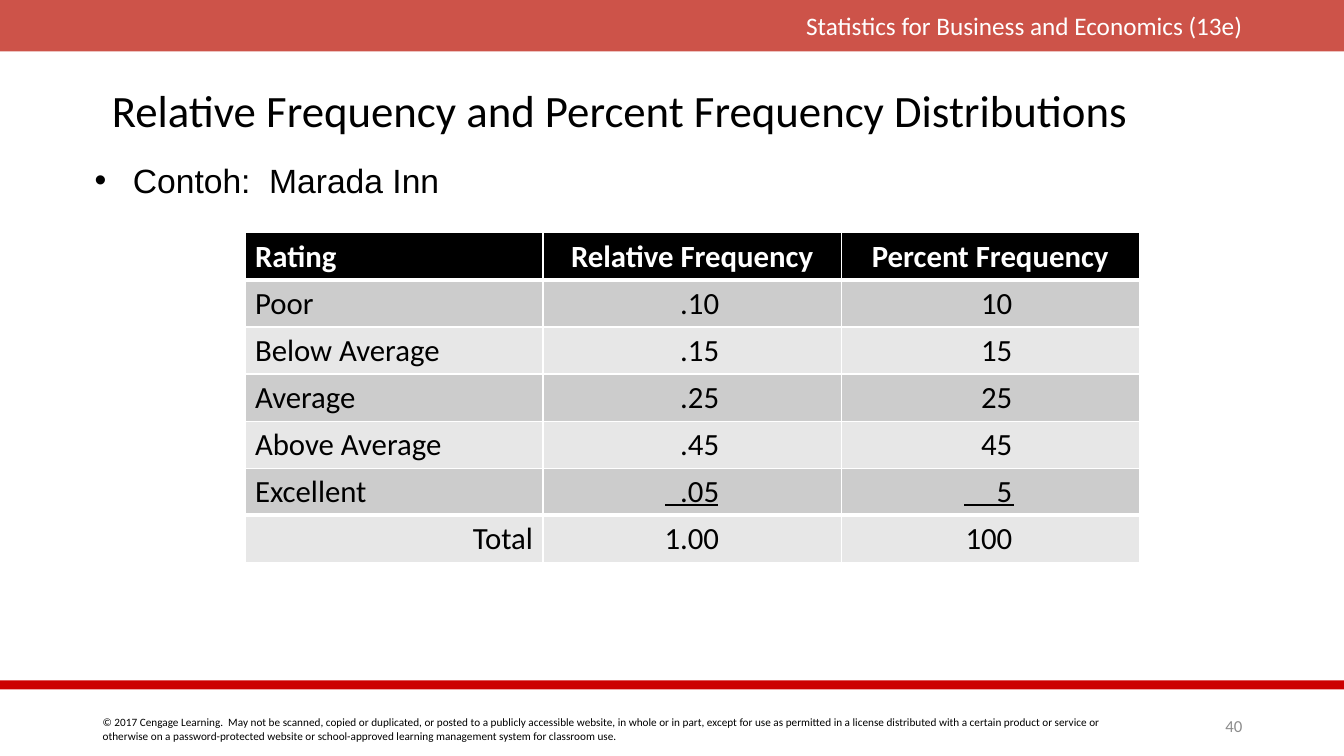
from lxml.etree import SubElement
from pptx import Presentation
from pptx.dml.color import RGBColor as Color
from pptx.enum.shapes import MSO_CONNECTOR as Connector, MSO_SHAPE as Shape
from pptx.enum.text import MSO_ANCHOR as Anchor, PP_ALIGN as Align
from pptx.oxml.ns import qn
from pptx.util import Inches, Pt

BLACK = Color(0x00, 0x00, 0x00)
WHITE = Color(0xFF, 0xFF, 0xFF)
BRICK = Color(0xBF, 0x23, 0x17)
RED = Color(0xCC, 0x00, 0x00)
GRAY = Color(0x8C, 0x8C, 0x8C)
DARK_BAND = Color(0xCC, 0xCC, 0xCC)
LIGHT_BAND = Color(0xE7, 0xE7, 0xE7)

COPYRIGHT = (
    "© 2017 Cengage Learning.  May not be scanned, copied or duplicated, or posted to a "
    "publicly accessible website, in whole or in part, except for use as permitted in a "
    "license distributed with a certain product or service or otherwise on a "
    "password-protected website or school-approved learning management system for "
    "classroom use."
)
RATINGS = [
    ("Rating", "Relative Frequency", "Percent Frequency"),
    ("Poor", ".10", "10"),
    ("Below Average", ".15", "15"),
    ("Average", ".25", "25"),
    ("Above Average", ".45", "45"),
    ("Excellent", ".05", "5"),
    ("Total", "1.00", "100"),
]
NUMBER_INSETS = {1: 9.08, 2: 9.45}


def write(frame, text, size=22, color=BLACK, font="Calibri", bold=False,
          align=Align.LEFT, spacing=None, bullet=None, indent=0):
    para = frame.paragraphs[0]
    para.alignment = align
    if spacing:
        para.line_spacing = spacing
    if bullet:
        properties = para._p.get_or_add_pPr()
        properties.set("marL", str(Inches(indent)))
        properties.set("indent", str(-Inches(indent)))
        SubElement(properties, qn("a:buFont"), typeface="Arial")
        SubElement(properties, qn("a:buChar"), char=bullet)
    span = para.add_run()
    span.text = text
    span.font.name = font
    span.font.size = Pt(size)
    span.font.bold = bold
    span.font.color.rgb = color


class RatingPage:
    def __init__(self, deck):
        self.width, self.height = deck.slide_width, deck.slide_height
        self.page = deck.slides.add_slide(deck.slide_layouts[6])

    def across(self, share):
        return round(self.width * share / 100)

    def down(self, share):
        return round(self.height * share / 100)

    def place(self, left, top, width, height):
        return self.across(left), self.down(top), self.across(width), self.down(height)

    def bar(self, area, color, opacity=100):
        bar = self.page.shapes.add_shape(Shape.RECTANGLE, *self.place(*area))
        bar.shadow.inherit = False
        bar.fill.solid()
        bar.fill.fore_color.rgb = color
        bar.line.fill.background()
        if opacity < 100:
            tone = bar._element.spPr.find(".//" + qn("a:srgbClr"))
            SubElement(tone, qn("a:alpha"), val=str(opacity * 1000))

    def text(self, area, text, anchor=Anchor.TOP, **style):
        box = self.page.shapes.add_textbox(*self.place(*area))
        box.text_frame.word_wrap = True
        box.text_frame.vertical_anchor = anchor
        write(box.text_frame, text, **style)

    def rule(self, left, right, top):
        line = self.page.shapes.add_connector(
            Connector.STRAIGHT, self.across(left), self.down(top),
            self.across(right), self.down(top))
        line.line.color.rgb = BLACK
        line.line.width = Pt(2)
        SubElement(line._element.spPr, qn("a:effectLst"))

    def border(self, cell, widths):
        properties = cell._tc.get_or_add_tcPr()
        for side, width in zip("LRTB", widths):
            line = SubElement(properties, qn("a:ln" + side), w=str(Pt(width)))
            fill = SubElement(line, qn("a:solidFill"))
            SubElement(fill, qn("a:srgbClr"), val=str(WHITE))

    def table(self, area, rows):
        table = self.page.shapes.add_table(
            len(rows), len(rows[0]), *self.place(*area)).table
        table.horz_banding = False
        last = len(rows) - 1
        for row, values in enumerate(rows):
            header = row == 0
            band = BLACK if header else DARK_BAND if row % 2 else LIGHT_BAND
            top = 3 if row in (1, last) else 1
            bottom = 3 if row in (0, last - 1) else 1
            for column, value in enumerate(values):
                cell = table.cell(row, column)
                self.border(cell, (1, 1, top, bottom))
                cell.fill.solid()
                cell.fill.fore_color.rgb = band
                align = Align.LEFT
                if header and column:
                    align = Align.CENTER
                elif column:
                    align = Align.RIGHT
                    cell.margin_right = self.across(NUMBER_INSETS[column])
                elif row == last:
                    align = Align.RIGHT
                write(cell.text_frame, value, bold=header, align=align,
                      color=WHITE if header else BLACK)


def main():
    deck = Presentation()
    deck.slide_width, deck.slide_height = Inches(13.33), Inches(7.5)
    page = RatingPage(deck)
    page.bar((0, 0, 100, 6.8), BRICK, opacity=78)
    page.text((6.9, 94, 77.5, 4.93), COPYRIGHT, size=8)
    page.text((57.46, 0.67, 35.71, 5.33), "Statistics for Business and Economics (13e)",
              size=18, color=WHITE, align=Align.RIGHT)
    page.bar((0, 90, 100, 1.2), RED)
    page.text((88, 94, 5.18, 4), "40", size=12, color=GRAY, align=Align.RIGHT,
              anchor=Anchor.MIDDLE)
    page.text((6.3, 20.53, 45.16, 7.33), "Contoh:  Marada Inn", size=24, font="Arial",
              bullet="•", indent=0.38)
    page.text((7.58, 9.47, 84.85, 11.07),
              "Relative Frequency and Percent Frequency Distributions",
              size=32, spacing=0.9, anchor=Anchor.MIDDLE)
    page.table((18.23, 30.8, 66.54, 43.6), RATINGS)
    for left, right in ((49.48, 53.42), (71.73, 75.45)):
        page.rule(left, right, 66.8)
    deck.save("out.pptx")


if __name__ == "__main__":
    main()
